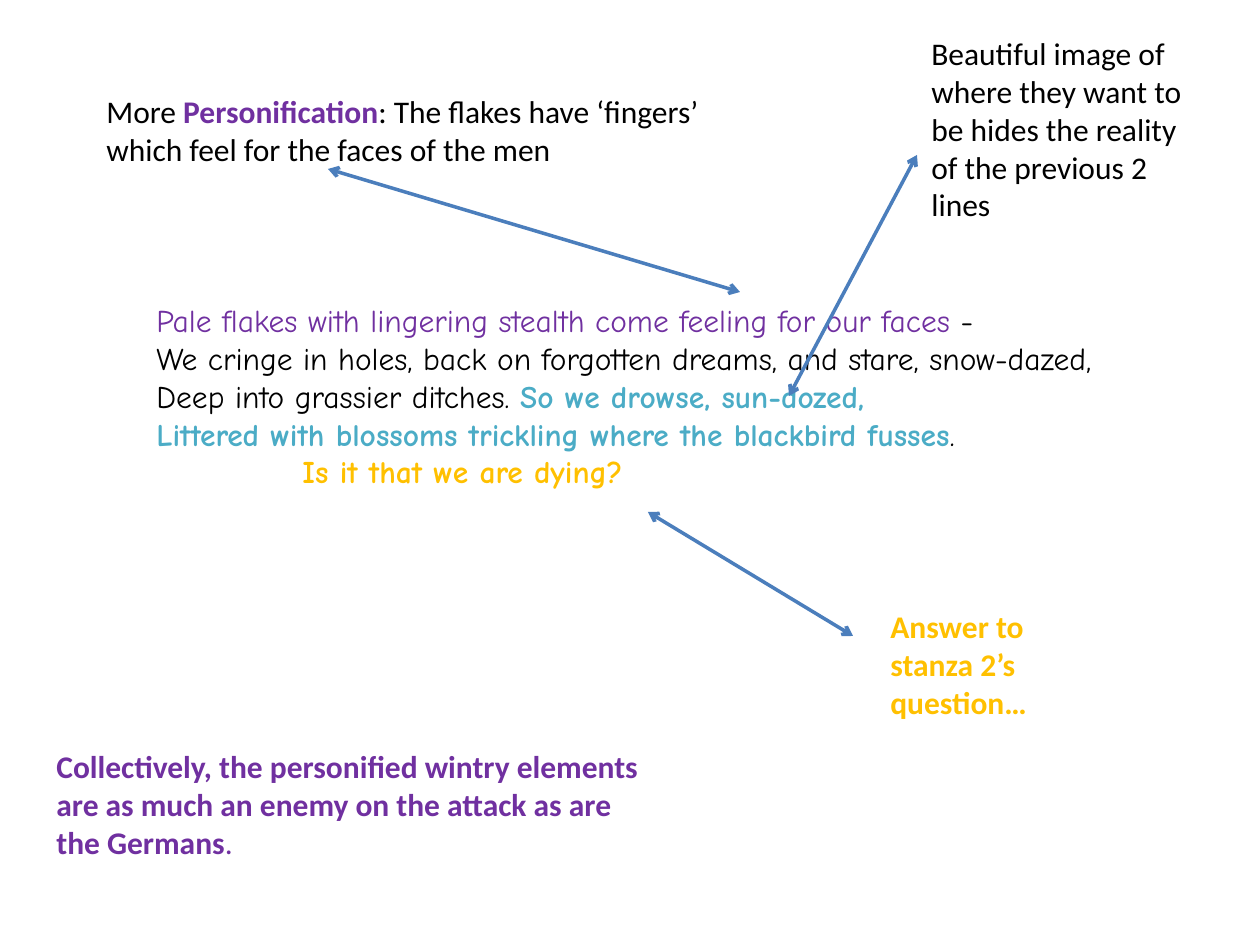
from typing import NamedTuple

from lxml import etree
from pptx import Presentation
from pptx import util as u
from pptx.dml.color import RGBColor
from pptx.enum import shapes, text
from pptx.oxml.ns import qn

EMU_PER_PX = 914400 / 126
BLACK, PURPLE, TEAL, GOLD, BLUE = "000000", "7030A0", "4BACC6", "FFC000", "4B7EBC"
NOTE_FONT, POEM_FONT = "Calibri", "Comic Neue"


class Run(NamedTuple):
    text: str
    color: str = BLACK
    bold: bool = False


class Line(NamedTuple):
    runs: list[Run]
    indent: int = 0


class TextBox(NamedTuple):
    x: int
    y: int
    w: int
    h: int
    lines: list[Line]
    font: str = NOTE_FONT


class Arrow(NamedTuple):
    x1: int
    y1: int
    x2: int
    y2: int


def px(n: int) -> u.Emu:
    return u.Emu(round(n * EMU_PER_PX))


def rgb(color: str) -> RGBColor:
    return RGBColor.from_string(color)


def draw_text(s, box: TextBox) -> None:
    sp = s.shapes.add_textbox(px(box.x), px(box.y), px(box.w), px(box.h))
    tf = sp.text_frame
    tf.word_wrap = True
    tf.auto_size = text.MSO_AUTO_SIZE.SHAPE_TO_FIT_TEXT
    for i, line in enumerate(box.lines):
        p = tf.add_paragraph() if i else tf.paragraphs[0]
        if line.indent:
            p._p.get_or_add_pPr().set("marL", str(px(line.indent)))
        for part in line.runs:
            r = p.add_run()
            r.text = part.text
            r.font.name = box.font
            r.font.size = u.Pt(18)
            r.font.bold = part.bold
            r.font.color.rgb = rgb(part.color)


def draw_arrow(s, arrow: Arrow) -> None:
    c = s.shapes.add_connector(shapes.MSO_CONNECTOR.STRAIGHT, *map(px, arrow))
    c.line.color.rgb = rgb(BLUE)
    c.line.width = u.Pt(2)
    ln = c.line._get_or_add_ln()
    for end in ("a:headEnd", "a:tailEnd"):
        etree.SubElement(ln, qn(end), type="arrow")
    etree.SubElement(c._element.spPr, qn("a:effectLst"))


# Stanza in the middle of the slide
POEM = TextBox(144, 295, 1062, 204, [
    Line([Run("Pale flakes with lingering stealth come feeling for our faces ", PURPLE),
          Run("-")]),
    Line([Run("We cringe in holes, back on forgotten dreams, and stare, snow-dazed,")]),
    Line([Run("Deep into grassier ditches. "),
          Run("So we drowse, sun-dozed,", TEAL, True)]),
    Line([Run("Littered with blossoms trickling where the blackbird fusses", TEAL, True),
          Run(".")]),
    Line([Run("Is it that we are dying?", GOLD, True)], indent=146),
], POEM_FONT)

# Notes around the stanza, with the arrows that tie them to it
PERSONIFICATION = TextBox(94, 86, 630, 89, [Line([
    Run("More "),
    Run("Personification", PURPLE, True),
    Run(": The flakes have ‘fingers’ which feel for the faces of the men"),
])])
ENEMY = TextBox(44, 741, 630, 127, [Line([
    Run("Collectively, the personified wintry elements are as much an enemy "
        "on the attack as are the Germans", PURPLE, True),
    Run(".", PURPLE),
])])
ANSWER = TextBox(878, 601, 198, 127, [
    Line([Run("Answer to stanza 2’s question…", GOLD, True)])])
IMAGERY = TextBox(919, 28, 277, 204, [
    Line([Run("Beautiful image of where they want to be hides the reality "
              "of the previous 2 lines")])])

ITEMS = [
    POEM,
    PERSONIFICATION, Arrow(328, 169, 740, 292),
    ENEMY,
    Arrow(648, 512, 853, 636), ANSWER,
    Arrow(917, 155, 789, 396), IMAGERY,
]


def main() -> None:
    prs = Presentation()
    prs.slide_width, prs.slide_height = px(1260), px(945)
    s = prs.slides.add_slide(prs.slide_layouts[6])
    for item in ITEMS:
        if isinstance(item, TextBox):
            draw_text(s, item)
        else:
            draw_arrow(s, item)
    prs.save("out.pptx")


if __name__ == "__main__":
    main()
